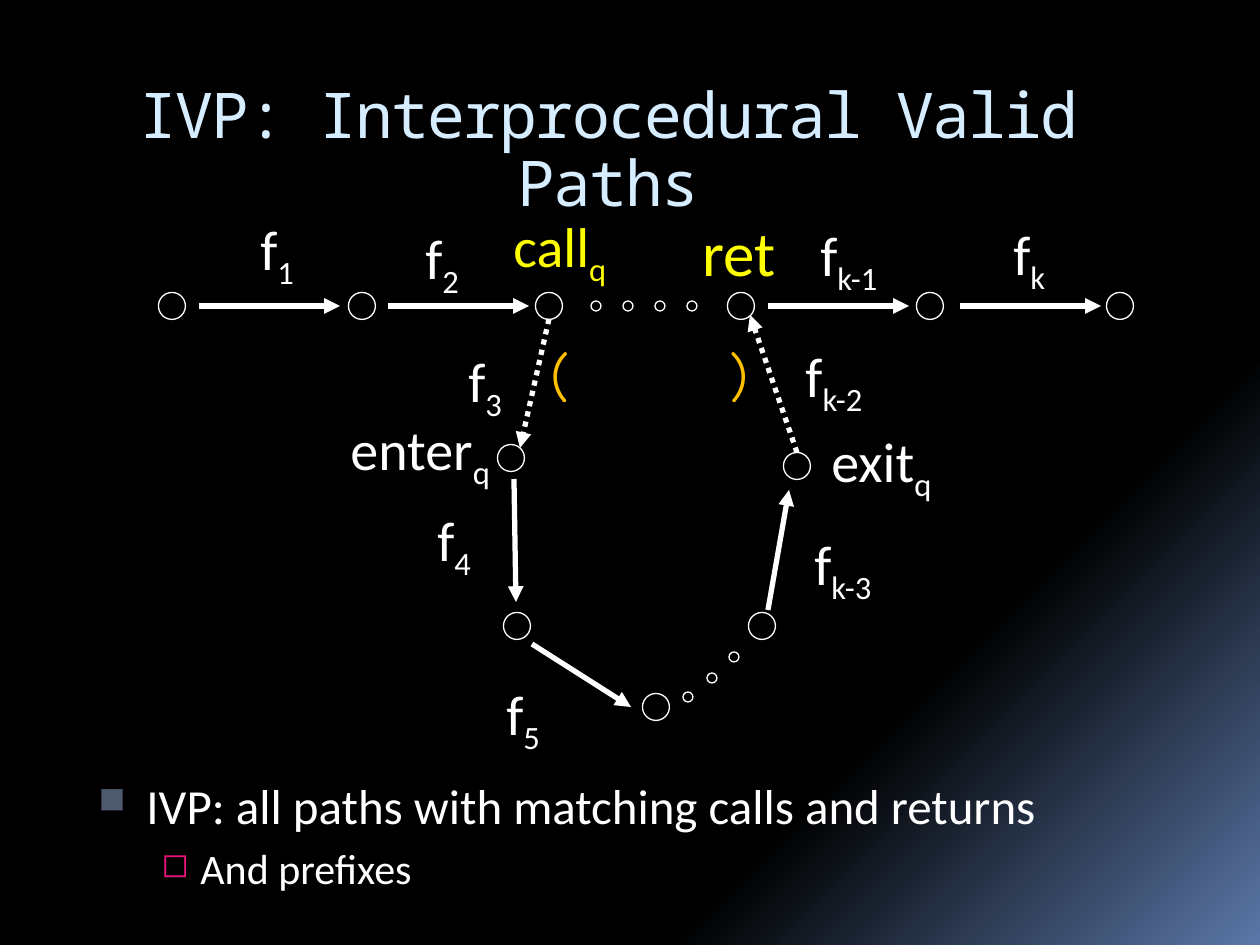
"""Build a slide about interprocedural valid paths."""
from lxml import etree
from pptx import Presentation
from pptx.dml.color import RGBColor
from pptx.enum.dml import MSO_LINE
from pptx.enum.shapes import MSO_CONNECTOR, MSO_SHAPE
from pptx.enum.text import MSO_ANCHOR, MSO_AUTO_SIZE, PP_ALIGN
from pptx.oxml.ns import qn
from pptx.util import Emu, Pt

OVAL = MSO_SHAPE.OVAL
STRAIGHT = MSO_CONNECTOR.STRAIGHT
DOTTED = MSO_LINE.ROUND_DOT
TOP, MIDDLE = MSO_ANCHOR.TOP, MSO_ANCHOR.MIDDLE
CENTER, LEFT = PP_ALIGN.CENTER, PP_ALIGN.LEFT
GROW, FIXED = MSO_AUTO_SIZE.SHAPE_TO_FIT_TEXT, MSO_AUTO_SIZE.NONE
SCALE = 914400 / 126
COLORS = {
    "black": "000000", "white": "FFFFFF", "title": "D6ECFF", "glow": "5B77A8",
    "yellow": "FFFF00", "gold": "FFC000", "slate": "4E5B6F", "pink": "EA157A",
}
ROW, NODE, DOT = 306, 27, 10
NODES = {
    "start": (172, ROW), "second": (362, ROW), "call": (549, ROW),
    "return": (741, ROW), "before_last": (930, ROW), "last": (1120, ROW),
    "enter": (511, 458), "exit": (797, 466), "body_first": (517, 626),
    "body_middle": (656, 707), "body_last": (762, 626),
}
DOTS = [(596 + 32 * step, ROW) for step in range(4)] + [(688, 697), (712, 678), (734, 657)]
ROW_ARROWS = (199, 388, 768, 960)
BODY_ARROWS = [(514, 479, 516, 602), (532, 644, 631, 707), (768, 610, 789, 490)]
LABELS = [
    ("f", "1", 248, 208, 62), ("f", "2", 413, 217, 62), ("f", "3", 456, 340, 62),
    ("f", "4", 425, 499, 62), ("f", "5", 494, 673, 62), ("f", "k-3", 802, 523, 91),
    ("f", "k-2", 793, 335, 93), ("f", "k-1", 808, 214, 91), ("f", "k", 1001, 213, 62),
    ("enter", "q", 338, 408, 170), ("exit", "q", 819, 420, 132),
]
BULLETS = [
    ("IVP: all paths with matching calls and returns", 28, "■", "slate", 75, 48, 48),
    ("And prefixes", 24, "◻", "pink", 80, 102, 39),
]


def px(length):
    """Turn px into EMU."""
    return Emu(round(length * SCALE))


def rgb(name):
    """Look up a named colour."""
    return RGBColor.from_string(COLORS[name])


def assign(target, **values):
    """Set each format value on the target."""
    for name, value in values.items():
        setattr(target, name, value)


class Painter:
    """Holds the style and the current slide."""

    def __init__(self, slide, font="Calibri", color="white"):
        """Keep the slide and its default text style."""
        self.slide, self.font, self.color = slide, font, color

    def background(self):
        """Fade from black into blue at the lower right corner."""
        fill = self.slide.background.fill
        fill.gradient()
        fill.gradient_angle = 315
        for stop, (position, color) in zip(fill.gradient_stops, [(0.73, "black"), (1, "glow")]):
            stop.position = position
            stop.color.rgb = rgb(color)

    def circle(self, center, size):
        """Draw an outlined circle around a centre."""
        x, y = center
        shape = self.slide.shapes.add_shape(
            OVAL, px(x - size / 2), px(y - size / 2), px(size), px(size))
        shape.shadow.inherit = False
        shape.fill.solid()
        shape.fill.fore_color.rgb = rgb("black")
        shape.line.color.rgb = rgb(self.color)
        shape.line.width = Pt(0.75)
        return shape

    def arrow(self, x1, y1, x2, y2, dash=None):
        """Draw an arrow between two points."""
        arrow = self.slide.shapes.add_connector(STRAIGHT, px(x1), px(y1), px(x2), px(y2))
        arrow.line.color.rgb = rgb(self.color)
        assign(arrow.line, width=Pt(3), dash_style=dash)
        etree.SubElement(arrow.line._get_or_add_ln(), qn("a:tailEnd"), type="triangle")
        etree.SubElement(arrow._element.spPr, qn("a:effectLst"))
        return arrow

    def box(self, x, y, width, height, wrap=False, anchor=TOP):
        """Add a text box and return its frame."""
        frame = self.slide.shapes.add_textbox(px(x), px(y), px(width), px(height)).text_frame
        assign(frame, word_wrap=wrap, auto_size=FIXED if wrap else GROW, vertical_anchor=anchor)
        return frame

    def span(self, para, text, size, color=None, font=None, **attributes):
        """Add a styled run, with extra run attributes."""
        span = para.add_run()
        span.text = text
        assign(span.font, name=font or self.font, size=Pt(size))
        span.font.color.rgb = rgb(color or self.color)
        for name, value in attributes.items():
            span._r.get_or_add_rPr().set(name, value)

    def label(self, text, below, x, y, width, color=None, size=32):
        """Write a label with an optional subscript."""
        para = self.box(x, y, width, 80).paragraphs[0]
        self.span(para, text, size, color)
        if below:
            self.span(para, below, size, color, baseline="-25000")

    def bracket(self, text, x):
        """Write one of the matching parentheses."""
        frame = self.box(x, 334, 45, 80, anchor=MIDDLE)
        self.span(frame.paragraphs[0], text, 32, "gold", "Comic Neue")

    def title(self, text):
        """Write the slide title."""
        para = self.box(53, 78, 1111, 127, wrap=True).paragraphs[0]
        assign(para, alignment=CENTER, line_spacing=0.9)
        self.span(para, text, 36, "title", "Noto Sans Mono", spc="-100")

    def bullets(self, items):
        """Write the bullet list, one level deeper for each item."""
        frame = self.box(86, 769, 1065, 130, wrap=True)
        for level, (text, size, mark, color, percent, margin, hang) in enumerate(items):
            para = frame.add_paragraph() if level else frame.paragraphs[0]
            assign(para, level=level, alignment=LEFT, space_before=Pt(size * 0.2))
            self.span(para, text, size)
            format_ = para._p.get_or_add_pPr()
            format_.set("marL", str(px(margin)))
            format_.set("indent", str(-px(hang)))
            tint = etree.SubElement(format_, qn("a:buClr"))
            etree.SubElement(tint, qn("a:srgbClr"), val=COLORS[color])
            etree.SubElement(format_, qn("a:buSzPct"), val=str(percent * 1000))
            etree.SubElement(format_, qn("a:buChar"), char=mark)


def main():
    """Build and save the deck."""
    deck = Presentation()
    assign(deck, slide_width=px(1260), slide_height=px(945))
    page = Painter(deck.slides.add_slide(deck.slide_layouts[6]))
    page.background()
    page.title("IVP: Interprocedural Valid Paths")
    nodes = {name: page.circle(center, NODE) for name, center in NODES.items()}
    for center in DOTS:
        page.circle(center, DOT)
    for x in ROW_ARROWS:
        page.arrow(x, ROW, x + 141, ROW)
    for ends in BODY_ARROWS:
        page.arrow(*ends)
    page.arrow(549, 319, 520, 448, DOTTED)
    page.arrow(797, 452, 750, 315, DOTTED).begin_connect(nodes["exit"], 0)
    page.bracket("(", 538)
    page.bracket(")", 717)
    for label in LABELS:
        page.label(*label)
    page.label("call", "q", 501, 205, 127, "yellow")
    page.label("ret", "", 690, 207, 101, "yellow", 36)
    page.bullets(BULLETS)
    deck.save("out.pptx")


if __name__ == "__main__":
    main()
